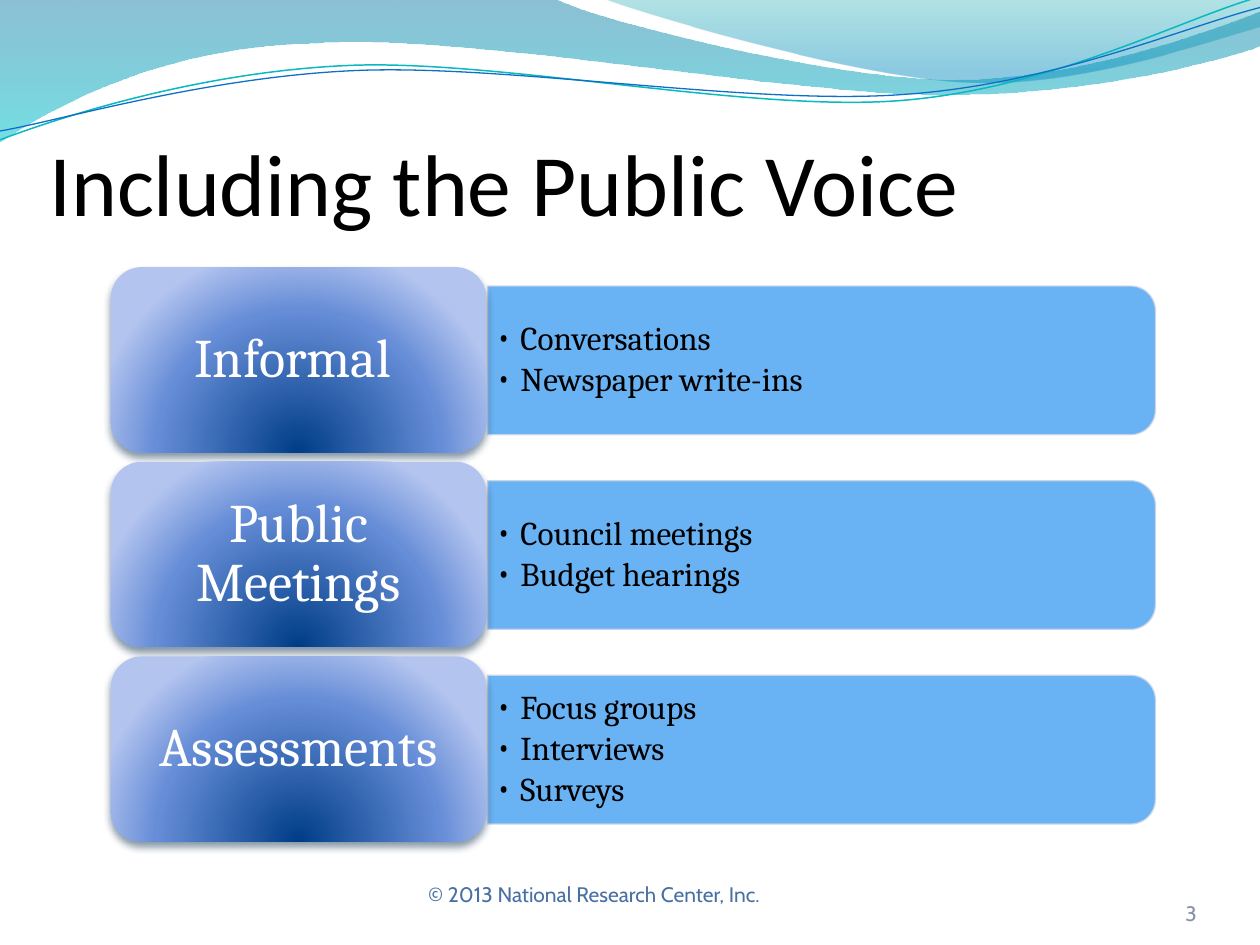
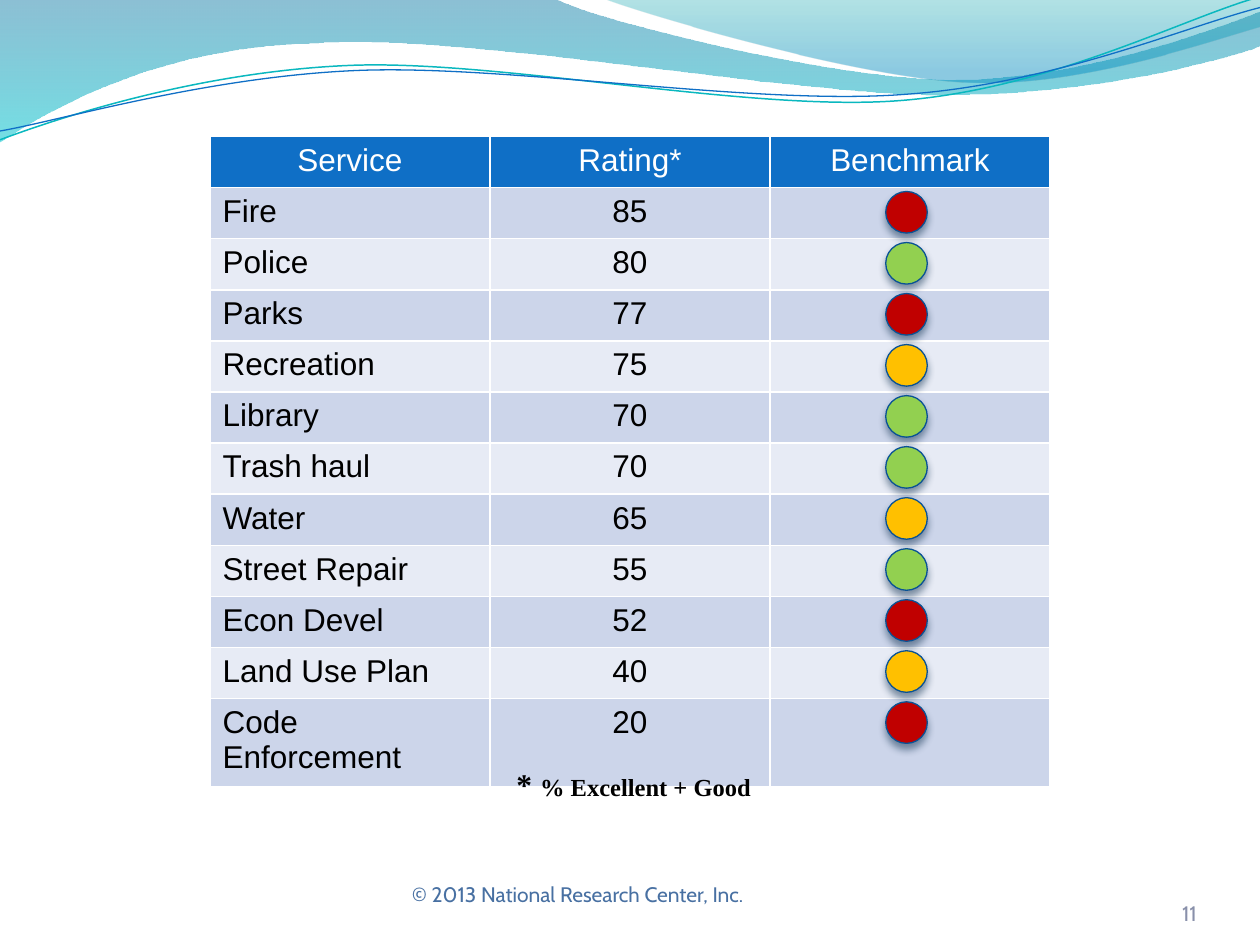
import pptx
import pptx.util
import pptx.oxml
import pptx.oxml.ns
from pptx.dml.color import RGBColor
from pptx.enum.shapes import MSO_SHAPE
from pptx.enum.text import MSO_ANCHOR, MSO_AUTO_SIZE, PP_ALIGN
from pptx.util import Inches, Pt

qn = pptx.oxml.ns.qn
NS = pptx.oxml.ns.nsdecls("a")

BLACK = RGBColor(0x00, 0x00, 0x00)
WHITE = RGBColor(0xFF, 0xFF, 0xFF)
BLUE = RGBColor(0x0F, 0x6F, 0xC6)
TEAL = RGBColor(0x0A, 0xB8, 0xBF)
SKY = RGBColor(0x59, 0xAA, 0xF2)
PALE = RGBColor(0xCC, 0xD5, 0xEA)
PALER = RGBColor(0xE7, 0xEB, 0xF5)
DOT_EDGE = RGBColor(0x09, 0x52, 0x95)
FOOTER = RGBColor(0x48, 0x70, 0xA2)
NUMBER = RGBColor(0x89, 0x90, 0xAA)
RED = RGBColor(0xC0, 0x00, 0x00)
GREEN = RGBColor(0x92, 0xD0, 0x50)
AMBER = RGBColor(0xFF, 0xC0, 0x00)

TITLE_FONT = {"name": "Calibri", "size": Pt(50)}
CARD_FONT = {"name": "Cambria", "size": Pt(31)}
LIST_FONT = {"name": "Cambria", "size": Pt(19)}
FOOTER_FONT = {"name": "Cabin", "size": Pt(12)}
TABLE_FONT = {"name": "Arial", "size": Pt(18), "bold": False}
NOTE_FONT = {"name": "Times New Roman", "size": Pt(18), "bold": True}

NO_MARGINS = {"margin_left": 0, "margin_right": 0, "margin_top": 0, "margin_bottom": 0}
DOWNWARD = '<a:lin %s ang="5400000" scaled="1"/>' % NS
FROM_BELOW = ('<a:path %s path="circle"><a:fillToRect l="50000" t="130000" '
              'r="50000" b="-30000"/></a:path>' % NS)
SHADOW = ('<a:outerShdw %s blurRad="57150" dist="38100" dir="5400000" '
          'algn="ctr" rotWithShape="0"><a:srgbClr val="042747">'
          '<a:alpha val="48000"/></a:srgbClr></a:outerShdw>' % NS)


def write(tf, lines, font, color, para={}, frame={}, bullet=False):
    """Fill a text frame, one paragraph a line, with the given formats."""
    tf.word_wrap = True
    for key, value in frame.items():
        setattr(tf, key, value)
    for i, line in enumerate(lines):
        p = tf.add_paragraph() if i else tf.paragraphs[0]
        for key, value in para.items():
            setattr(p, key, value)
        if bullet:
            pPr = p._p.get_or_add_pPr()
            pPr.set("marL", str(Inches(0.19)))
            pPr.set("indent", str(-Inches(0.19)))
            pPr.append(pptx.oxml.parse_xml('<a:buFont %s typeface="Cambria"/>' % NS))
            pPr.append(pptx.oxml.parse_xml('<a:buChar %s char="•"/>' % NS))
        r = p.add_run()
        r.text = line
        for key, value in font.items():
            setattr(r.font, key, value)
        r.font.color.rgb = color


def fill_gradient(sp, stops, direction):
    """Fill with stops of (percent, colour, opacity percent)."""
    sp.fill.gradient()
    grad = sp.element.spPr.find(qn("a:gradFill"))
    for child in list(grad):
        grad.remove(child)
    gs = "".join('<a:gs pos="%d"><a:srgbClr val="%s"><a:alpha val="%d"/></a:srgbClr></a:gs>'
                 % (pos * 1000, color, opacity * 1000) for pos, color, opacity in stops)
    grad.append(pptx.oxml.parse_xml("<a:gsLst %s>%s</a:gsLst>" % (NS, gs)))
    grad.append(pptx.oxml.parse_xml(direction))


prs = pptx.Presentation()
prs.slide_width, prs.slide_height = Inches(10), Inches(7.5)
voice = prs.slides.add_slide(prs.slide_layouts[5])
ratings = prs.slides.add_slide(prs.slide_layouts[6])
raised = []

# Waves on the master: a start point, then lines (one point) and curves (three points)
WAVES = [
    {"points": [(0, 0), [(4.4, -0.01)],
                [(4.76, 0.17), (6.64, 0.63), (7.58, 0.63)],
                [(8.53, 0.63), (9.58, 0.26), (10, 0.09)], [(10.01, 0.36)],
                [(9.83, 0.44), (8.7, 0.76), (7.46, 0.75)],
                [(6.22, 0.75), (3.82, 0.28), (2.57, 0.34)],
                [(1.29, 0.36), (0.46, 0.83), (-0.01, 1.13)], [(0, 0)]],
     "stops": [(0, "0074A1", 45), (100, "00C6CF", 55)]},
    {"points": [(4.79, -0.01), [(5.09, 0.11), (6.82, 0.62), (7.69, 0.65)],
                [(8.56, 0.69), (9.61, 0.32), (10, 0.21)], [(10, 0)], [(4.79, -0.01)]],
     "stops": [(0, "00A1A9", 30), (80, "008BBF", 45)]},
    {"points": [(0, 1.11), [(0.48, 0.93), (1.58, 0.57), (2.77, 0.52)],
                [(3.95, 0.47), (5.93, 0.89), (7.13, 0.8)],
                [(8.33, 0.71), (9.38, 0.15), (9.98, -0.02)]],
     "line": (TEAL, 0.85)},
    {"points": [(0, 1.04), [(0.47, 0.96), (1.64, 0.61), (2.83, 0.56)],
                [(4.03, 0.51), (5.97, 0.84), (7.17, 0.75)],
                [(8.36, 0.67), (9.41, 0.21), (10, 0.06)]],
     "line": (BLUE, 0.75)},
]
master_tree = prs.slide_master.shapes.element
for i, wave in enumerate(WAVES):
    start, *segments = wave["points"]
    builder = voice.shapes.build_freeform(Inches(start[0]), Inches(start[1]))
    builder.add_line_segments([(Inches(x), Inches(y)) for seg in segments for x, y in seg],
                              close="stops" in wave)
    sp = builder.convert_to_shape()
    sp.name = "Wave %d" % (i + 1)
    sp.shadow.inherit = False

    # Join each run of three line points into one curve
    steps = iter(list(sp.element.spPr.iter(qn("a:lnTo"))))
    for segment in segments:
        group = [next(steps) for _ in segment]
        if len(group) == 3:
            curve = pptx.oxml.parse_xml("<a:cubicBezTo %s/>" % NS)
            group[0].addprevious(curve)
            for step in group:
                curve.append(step[0])
                step.getparent().remove(step)

    if "stops" in wave:
        fill_gradient(sp, wave["stops"], DOWNWARD)
        sp.line.fill.background()
    else:
        color, width = wave["line"]
        sp.fill.background()
        sp.line.color.rgb = color
        sp.line.width = Pt(width)
    master_tree.insert(2 + i, sp.element)

# Footers
for s, number, left, width in [(voice, "3", 3.3, 4), (ratings, "11", 3.17, 3.83)]:
    sp = s.shapes.add_textbox(Inches(left), Inches(6.95), Inches(width), Inches(0.4))
    write(sp.text_frame, ["© 2013 National Research Center, Inc."], FOOTER_FONT, FOOTER)
    sp = s.shapes.add_textbox(Inches(8.67), Inches(6.95), Inches(0.83), Inches(0.4))
    write(sp.text_frame, [number], FOOTER_FONT, NUMBER, {"alignment": PP_ALIGN.RIGHT},
          {**NO_MARGINS, "vertical_anchor": MSO_ANCHOR.BOTTOM})

# Slide: ways to include the public
title = voice.shapes.title
title.left, title.top, title.width, title.height = map(Inches, (0.39, 0.61, 9, 1.25))
write(title.text_frame, ["Including the Public Voice"], TITLE_FONT, BLACK,
      {"alignment": PP_ALIGN.LEFT},
      {**NO_MARGINS, "margin_top": Inches(0.05), "vertical_anchor": MSO_ANCHOR.BOTTOM,
       "auto_size": MSO_AUTO_SIZE.NONE})

CHANNELS = [
    ("Informal ", ["Conversations", "Newspaper write-ins"]),
    ("Public Meetings", ["Council meetings", "Budget hearings"]),
    ("Assessments", ["Focus groups", "Interviews", "Surveys"]),
]
for i, (channel, examples) in enumerate(CHANNELS):
    drop = 1.545 * i
    bar = voice.shapes.add_shape(MSO_SHAPE.ROUND_2_SAME_RECTANGLE, Inches(5.93),
                                 Inches(0.21 + drop), Inches(1.18), Inches(5.3))
    bar.rotation = 90
    bar.shadow.inherit = False
    bar.fill.solid()
    bar.fill.fore_color.rgb = SKY
    bar.line.color.rgb = PALE
    bar.line.width = Pt(0.75)
    for clr in bar.element.spPr.iter(qn("a:srgbClr")):
        clr.append(pptx.oxml.parse_xml('<a:alpha %s val="90000"/>' % NS))

    sp = voice.shapes.add_textbox(Inches(3.86), Inches(2.33 + drop),
                                  Inches(5.25), Inches(1.06))
    write(sp.text_frame, examples, LIST_FONT, BLACK,
          {"level": 1, "line_spacing": 0.9, "space_after": Pt(3)},
          {"margin_left": Inches(0.08), "margin_right": Inches(0.08),
           "margin_top": Inches(0.04), "margin_bottom": Inches(0.04),
           "vertical_anchor": MSO_ANCHOR.MIDDLE}, bullet=True)

    card = voice.shapes.add_shape(MSO_SHAPE.ROUNDED_RECTANGLE, Inches(0.88),
                                  Inches(2.12 + drop), Inches(2.98), Inches(1.47))
    fill_gradient(card, [(0, "003D87", 100), (68, "668DD7", 100), (100, "B3C4EF", 100)],
                  FROM_BELOW)
    card.line.fill.background()
    write(card.text_frame, [channel], CARD_FONT, WHITE,
          {"alignment": PP_ALIGN.CENTER, "line_spacing": 0.9},
          {"margin_left": Inches(0.13), "margin_right": Inches(0.13),
           "margin_top": Inches(0.06), "margin_bottom": Inches(0.06),
           "vertical_anchor": MSO_ANCHOR.MIDDLE})
    raised.append(card)

# Slide: service ratings
HEADINGS = ("Service", "Rating*", "Benchmark")
SERVICES = [
    ("Fire", 85, RED), ("Police", 80, GREEN), ("Parks", 77, RED),
    ("Recreation", 75, AMBER), ("Library", 70, GREEN), ("Trash haul", 70, GREEN),
    ("Water", 65, AMBER), ("Street Repair", 55, GREEN), ("Econ Devel", 52, RED),
    ("Land Use Plan", 40, AMBER), ("Code Enforcement", 20, RED),
]
rows = [HEADINGS] + [(name, str(rating), "") for name, rating, _ in SERVICES]
table = ratings.shapes.add_table(len(rows), len(HEADINGS), Inches(5 / 3), Inches(13 / 12),
                                 Inches(20 / 3), len(rows) * Pt(29.2)).table
for i, row in enumerate(rows):
    for j, text in enumerate(row):
        cell = table.cell(i, j)
        cell.fill.solid()
        cell.fill.fore_color.rgb = BLUE if i == 0 else PALE if i % 2 else PALER
        if text:
            centred = i == 0 or j > 0
            write(cell.text_frame, [text], TABLE_FONT, BLACK if i else WHITE,
                  {"alignment": PP_ALIGN.CENTER if centred else PP_ALIGN.LEFT})

sp = ratings.shapes.add_textbox(Inches(4), Inches(6.02), Inches(3.75), Inches(0.4))
write(sp.text_frame, ["* "], NOTE_FONT, BLACK)
r = sp.text_frame.paragraphs[0].add_run()
r.text = "% Excellent + Good"
for key, value in {**NOTE_FONT, "size": Pt(14)}.items():
    setattr(r.font, key, value)
r.font.color.rgb = BLACK

for i, (_, _, color) in enumerate(SERVICES):
    dot = ratings.shapes.add_shape(MSO_SHAPE.OVAL, Inches(7.03), Inches(1.52 + 0.405 * i),
                                   Inches(0.33), Inches(0.33))
    dot.fill.solid()
    dot.fill.fore_color.rgb = color
    dot.line.color.rgb = DOT_EDGE
    dot.line.width = Pt(0.75)
    raised.append(dot)

for sp in raised:
    sp.shadow.inherit = False
    sp.element.spPr.find(qn("a:effectLst")).append(pptx.oxml.parse_xml(SHADOW))

prs.save("out.pptx")
